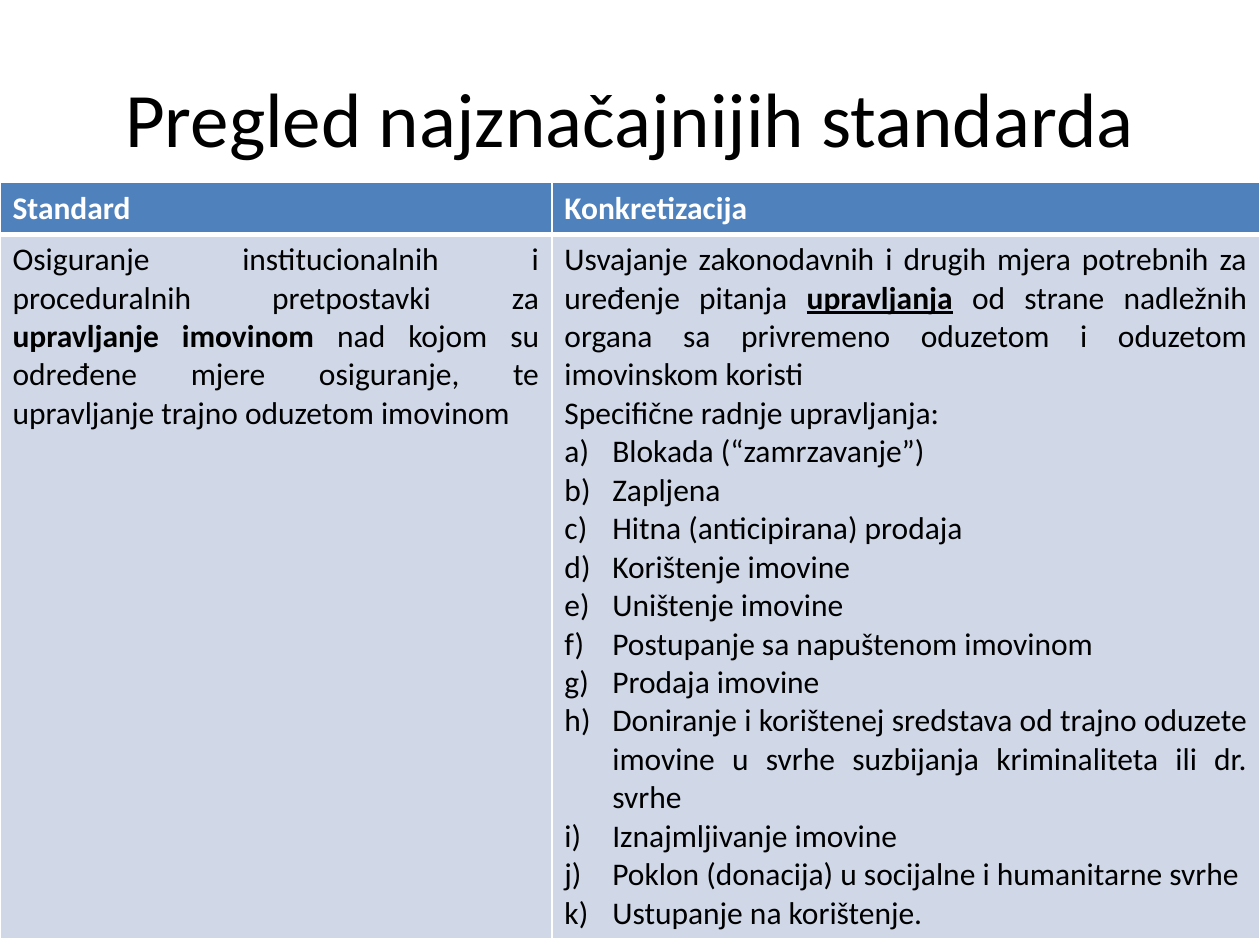
"""Build a slide with a title and a two-column table of standards."""
from lxml import etree
from pptx import Presentation
from pptx.dml.color import RGBColor
from pptx.enum.text import MSO_ANCHOR, PP_ALIGN
from pptx.oxml.ns import qn
from pptx.util import Inches, Pt

CENTER, JUST, LEFT = PP_ALIGN.CENTER, PP_ALIGN.JUSTIFY, PP_ALIGN.LEFT
MIDDLE = MSO_ANCHOR.MIDDLE
TITLE_ONLY = 5
FONT = "Calibri"
COLORS = {"ink": "000000", "white": "FFFFFF", "head": "4F81BD", "body": "D0D8E8"}

HEADS = ["Standard", "Konkretizacija"]
GOAL = [
    "Osiguranje institucionalnih i proceduralnih pretpostavki za ",
    ("upravljanje imovinom", "b"),
    " nad kojom su određene mjere osiguranje, te upravljanje trajno oduzetom imovinom",
]
RULE = [
    "Usvajanje zakonodavnih i drugih mjera potrebnih za uređenje pitanja ",
    ("upravljanja", "bu"),
    " od strane nadležnih organa sa privremeno oduzetom i oduzetom imovinskom koristi",
]
LEAD = "Specifične radnje upravljanja:"
ACTS = [
    "Blokada (“zamrzavanje”)",
    "Zapljena",
    "Hitna (anticipirana) prodaja",
    "Korištenje imovine",
    "Uništenje imovine",
    "Postupanje sa napuštenom imovinom",
    "Prodaja imovine",
    "Doniranje i korištenej sredstava od trajno oduzete imovine "
    "u svrhe suzbijanja kriminaliteta ili dr. svrhe",
    "Iznajmljivanje imovine",
    "Poklon (donacija) u socijalne i humanitarne svrhe",
    "Ustupanje na korištenje.",
]


def write(para, text, size=18, color="ink", bold=False, align=JUST):
    """Write a string, or a list of strings and (string, style) pairs."""
    para.alignment = align
    for part in [text] if isinstance(text, str) else text:
        words, style = (part, "") if isinstance(part, str) else part
        run = para.add_run()
        run.text = words
        font = run.font
        font.name, font.size = FONT, Pt(size)
        font.bold = bold or "b" in style
        font.underline = "u" in style
        font.color.rgb = RGBColor.from_string(COLORS[color])


def letter(para):
    """Number a paragraph a), b), c) with a hanging indent."""
    props = para._p.get_or_add_pPr()
    props.set("marL", str(Inches(0.38)))
    props.set("indent", str(Inches(-0.38)))
    etree.SubElement(props, qn("a:buFont"), typeface="+mj-lt")
    etree.SubElement(props, qn("a:buAutoNum"), type="alphaLcParenR")


def paint(cell, fill, **widths):
    """Fill a cell and give it white borders, 1 pt unless stated."""
    cell.fill.solid()
    cell.fill.fore_color.rgb = RGBColor.from_string(COLORS[fill])
    props = cell._tc.get_or_add_tcPr()
    for spot, side in enumerate("LRTB"):
        line = etree.Element(qn(f"a:ln{side}"), w=str(Pt(widths.get(side, 1))))
        solid = etree.SubElement(line, qn("a:solidFill"))
        etree.SubElement(solid, qn("a:srgbClr"), val=COLORS["white"])
        props.insert(spot, line)


def add_title(slide):
    """Place and write the title."""
    title = slide.shapes.title
    title.left, title.top = Inches(0.5), Inches(0.3)
    title.width, title.height = Inches(9), Inches(1.25)
    frame = title.text_frame
    frame.vertical_anchor = MIDDLE
    write(frame.paragraphs[0], "Pregled najznačajnijih standarda", size=44, align=CENTER)


def add_grid(slide):
    """Add the table with its heading row and body row."""
    frame = slide.shapes.add_table(2, 2, 0, Inches(1.45), Inches(10), Inches(0.82))
    frame.height = Inches(6.81)
    table = frame.table
    bodies = [[GOAL], [RULE, LEAD, *ACTS]]
    for col, (width, head, body) in enumerate(zip((4.38, 5.62), HEADS, bodies)):
        table.columns[col].width = Inches(width)
        top, low = table.cell(0, col), table.cell(1, col)
        paint(top, "head", B=3)
        paint(low, "body", T=3)
        write(top.text_frame.paragraphs[0], head, color="white", bold=True, align=LEFT)
        text = low.text_frame
        for row, item in enumerate(body):
            para = text.add_paragraph() if row else text.paragraphs[0]
            write(para, item)
            if item in ACTS:
                letter(para)


def main():
    """Build and save the slide."""
    deck = Presentation()
    deck.slide_width, deck.slide_height = Inches(10), Inches(7.5)
    slide = deck.slides.add_slide(deck.slide_layouts[TITLE_ONLY])
    add_title(slide)
    add_grid(slide)
    deck.save("out.pptx")


if __name__ == "__main__":
    main()
